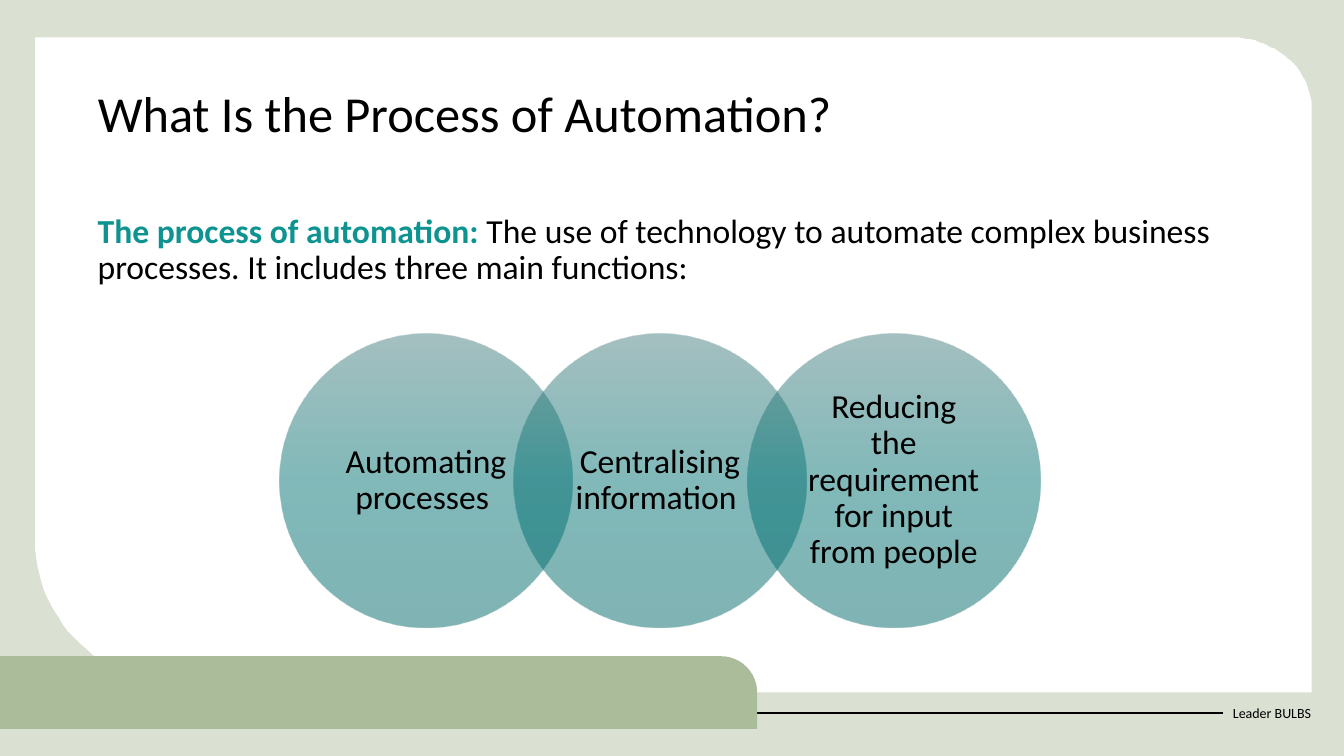
from math import cos, radians, sin

from pptx import Presentation
from pptx.dml.color import RGBColor
from pptx.enum.shapes import MSO_CONNECTOR, MSO_SHAPE
from pptx.enum.text import MSO_ANCHOR, MSO_AUTO_SIZE, PP_ALIGN
from pptx.oxml import parse_xml
from pptx.oxml.ns import nsdecls, qn
from pptx.util import Pt

PX = 9144  # 100 px to the inch
FONT = "Calibri"
BLACK = RGBColor(0x00, 0x00, 0x00)
WHITE = RGBColor(0xFF, 0xFF, 0xFF)
PALE_GREEN = RGBColor(0xDA, 0xE0, 0xD2)
SAGE = RGBColor(0xAA, 0xBC, 0x99)
TEAL = RGBColor(0x0D, 0x93, 0x90)
CIRCLE_STOPS = [
    (0, RGBColor(0x4B, 0x80, 0x81)),
    (50, RGBColor(0x03, 0x72, 0x73)),
    (100, RGBColor(0x00, 0x68, 0x69)),
]
CIRCLE_OPACITY = 50

FUNCTIONS = [
    "Automating processes ",
    "Centralising information ",
    "Reducing the requirement for input from people",
]
CIRCLE_LEFT, CIRCLE_TOP, CIRCLE_SIZE = 277, 331, 291
CIRCLE_STEP = CIRCLE_SIZE * 4 // 5


def box(left, top, width, height):
    return [value * PX for value in (left, top, width, height)]


def write_text(shape, text, size=24, color=BLACK, lead="", lead_color=TEAL,
               align=PP_ALIGN.LEFT, anchor=MSO_ANCHOR.TOP, spacing=0.9,
               wrap=True, margins=(10, 5)):
    """Fill a shape with one paragraph, opened by an optional bold lead."""
    frame = shape.text_frame
    frame.word_wrap = wrap
    frame.auto_size = MSO_AUTO_SIZE.NONE
    frame.vertical_anchor = anchor
    frame.margin_left = frame.margin_right = margins[0] * PX
    frame.margin_top = frame.margin_bottom = margins[1] * PX
    paragraph = frame.paragraphs[0]
    paragraph.alignment = align
    paragraph.line_spacing = spacing
    paragraph.space_before = Pt(0)
    for words, run_color, bold in ((lead, lead_color, True), (text, color, False)):
        if words:
            run = paragraph.add_run()
            run.text = words
            run.font.name = FONT
            run.font.size = Pt(size)
            run.font.bold = bold
            run.font.color.rgb = run_color


def fill_plain(shape, color):
    shape.shadow.inherit = False
    shape.fill.solid()
    shape.fill.fore_color.rgb = color
    shape.line.fill.background()


def fill_gradient(shape, stops, opacity):
    """Apply a translucent gradient that runs from top to bottom."""
    shape.shadow.inherit = False
    shape.line.fill.background()
    shape.fill.gradient()
    shape.fill.gradient_angle = 270
    stop_list = shape._element.spPr.find(qn("a:gradFill")).find(qn("a:gsLst"))
    for stop in list(stop_list):
        stop_list.remove(stop)
    for position, color in stops:
        stop_list.append(parse_xml(
            f'<a:gs {nsdecls("a")} pos="{position * 1000}"><a:srgbClr val="{color}">'
            f'<a:alpha val="{opacity * 1000}"/></a:srgbClr></a:gs>'))


def corner(center_x, center_y, radius_x, radius_y, start):
    """Points of a quarter ellipse, clockwise from the start angle."""
    angles = [radians(start + step * 3) for step in range(31)]
    return [(center_x + radius_x * cos(a), center_y + radius_y * sin(a)) for a in angles]


def add_panel(slide):
    left, top, right, bottom = 35, 37, 1301, 687
    points = [(left, top)]
    points += corner(right - 81, top + 71, 81, 71, 270)
    points += [(right, bottom)]
    points += corner(left + 170, bottom - 149, 170, 149, 90)
    builder = slide.shapes.build_freeform(left, top, scale=PX)
    builder.add_line_segments(points[1:], close=True)
    fill_plain(builder.convert_to_shape(), WHITE)


def add_footer(slide):
    label = slide.shapes.add_textbox(*box(1213, 687, 101, 40))
    write_text(label, "Leader BULBS", size=10, anchor=MSO_ANCHOR.MIDDLE,
               spacing=1.0, wrap=False)
    rule = slide.shapes.add_connector(
        MSO_CONNECTOR.STRAIGHT, 0, 707 * PX, 1213 * PX, 707 * PX)
    rule.end_connect(label, 1)
    rule.line.color.rgb = BLACK
    rule.line.width = Pt(1.5)
    rule._element.spPr.append(parse_xml(f'<a:effectLst {nsdecls("a")}/>'))
    band = slide.shapes.add_shape(MSO_SHAPE.ROUND_1_RECTANGLE, *box(0, 651, 751, 72))
    band.adjustments[0] = 0.5
    fill_plain(band, SAGE)


def add_title(slide, text):
    title = slide.shapes.title
    title.left, title.top, title.width, title.height = box(87, 83, 1159, 88)
    write_text(title, text, size=36)
    slide.shapes._spTree.append(title._element)  # bring in front of the panel


def add_circle(slide, left, text):
    circle = slide.shapes.add_shape(
        MSO_SHAPE.OVAL, *box(left, CIRCLE_TOP, CIRCLE_SIZE, CIRCLE_SIZE))
    fill_gradient(circle, CIRCLE_STOPS, CIRCLE_OPACITY)
    write_text(circle, text, align=PP_ALIGN.CENTER, anchor=MSO_ANCHOR.MIDDLE,
               margins=(16, 3))


def main():
    presentation = Presentation()
    presentation.slide_width = 1333 * PX
    presentation.slide_height = 750 * PX
    slide = presentation.slides.add_slide(presentation.slide_layouts[5])
    slide.background.fill.solid()
    slide.background.fill.fore_color.rgb = PALE_GREEN

    add_panel(slide)
    add_footer(slide)
    add_title(slide, "What Is the Process of Automation?")
    definition = slide.shapes.add_textbox(*box(87, 208, 1159, 100))
    write_text(definition,
               "The use of technology to automate complex business processes. "
               "It includes three main functions:",
               lead="The process of automation: ")
    for index, text in enumerate(FUNCTIONS):
        add_circle(slide, CIRCLE_LEFT + index * CIRCLE_STEP, text)

    presentation.save("out.pptx")


if __name__ == "__main__":
    main()
